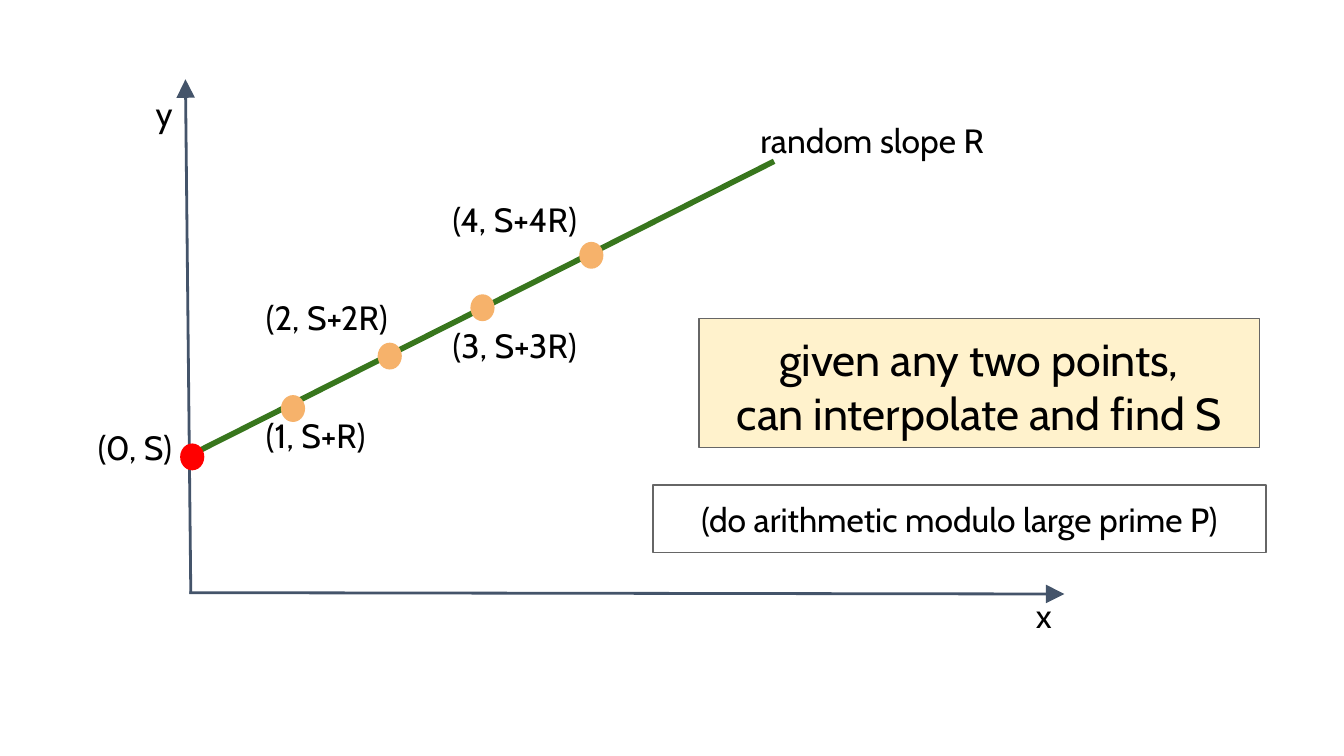
"""Build a slide that shows secret sharing with points on a line of random slope."""
from lxml.etree import SubElement
from pptx import Presentation
from pptx.dml.color import RGBColor
from pptx.enum.shapes import MSO_CONNECTOR, MSO_SHAPE
from pptx.enum.text import MSO_ANCHOR, PP_ALIGN
from pptx.oxml.ns import qn
from pptx.util import Inches, Pt

COL = ROW = Inches(0.1)
LABEL_HEIGHT = 5
DOT_WIDTH, DOT_HEIGHT = 1.8, 2


def paint(fill, hex_color):
    fill.solid()
    fill.fore_color.rgb = RGBColor.from_string(hex_color)


def write(frame, lines, size, align):
    frame.word_wrap = True
    frame.vertical_anchor = MSO_ANCHOR.TOP
    frame.margin_left = frame.margin_right = COL
    frame.margin_top = frame.margin_bottom = ROW
    for number, line in enumerate(lines):
        paragraph = frame.add_paragraph() if number else frame.paragraphs[0]
        paragraph.alignment = align
        run = paragraph.add_run()
        run.text = line
        run.font.name = "Cabin"
        run.font.size = Pt(size)
        paint(run.font.fill, "000000")


prs = Presentation()
prs.slide_width, prs.slide_height = 100 * COL, int(56.25 * ROW)
slide = prs.slides.add_slide(prs.slide_layouts[6])
shapes = slide.shapes

for x1, y1, x2, y2, color, weight, is_axis in [
    (14.1, 33.9, 57.6, 12, "38761D", 3, False),
    (14.1, 44.1, 79.2, 44.2, "44546A", 1.5, True),
    (14.2, 44.2, 13.8, 5.9, "44546A", 1.5, True),
]:
    stroke = shapes.add_connector(
        MSO_CONNECTOR.STRAIGHT, int(x1 * COL), int(y1 * ROW), int(x2 * COL), int(y2 * ROW)
    )
    stroke.line.width = Pt(weight)
    paint(stroke.line.fill, color)
    properties = stroke._element.spPr
    if is_axis:
        outline = properties.find(qn("a:ln"))
        SubElement(outline, qn("a:tailEnd"), type="triangle", w="lg", len="lg")
    SubElement(properties, qn("a:effectLst"))

for left, top, color in [
    (13.4, 33, "FF0000"),
    (20.9, 29.4, "F6B26B"),
    (28.1, 25.5, "F6B26B"),
    (35, 21.9, "F6B26B"),
    (43.1, 18, "F6B26B"),
]:
    dot = shapes.add_shape(
        MSO_SHAPE.OVAL,
        int(left * COL), int(top * ROW), int(DOT_WIDTH * COL), int(DOT_HEIGHT * ROW),
    )
    dot.shadow.inherit = False
    paint(dot.fill, color)
    dot.line.fill.background()

for wording, left, top, width in [
    ("x", 76.1, 43.3, 3.1),
    ("y", 10.6, 5.9, 3.1),
    ("(0, S)", 6.3, 30.8, 8.9),
    ("random slope R", 55.6, 7.9, 21.1),
    ("(1, S+R)", 18.8, 29.9, 11.3),
    ("(2, S+2R)", 18.8, 21.1, 13.1),
    ("(3, S+3R)", 32.7, 23.2, 13.1),
    ("(4, S+4R)", 32.7, 13.8, 13.1),
]:
    label = shapes.add_textbox(
        int(left * COL), int(top * ROW), int(width * COL), LABEL_HEIGHT * ROW
    )
    write(label.text_frame, [wording], 18, PP_ALIGN.LEFT)

for lines, left, top, width, height, size, color in [
    (["(do arithmetic modulo large prime P)"], 48.6, 36.1, 45.6, 5, 18, None),
    (["given any two points,", "can interpolate and find S"], 52, 23.7, 41.7, 9.6, 24, "FFF2CC"),
]:
    remark = shapes.add_shape(
        MSO_SHAPE.RECTANGLE,
        int(left * COL), int(top * ROW), int(width * COL), int(height * ROW),
    )
    remark.shadow.inherit = False
    if color:
        paint(remark.fill, color)
    else:
        remark.fill.background()
    remark.line.width = Pt(0.75)
    paint(remark.line.fill, "666666")
    write(remark.text_frame, lines, size, PP_ALIGN.CENTER)

prs.save("out.pptx")
